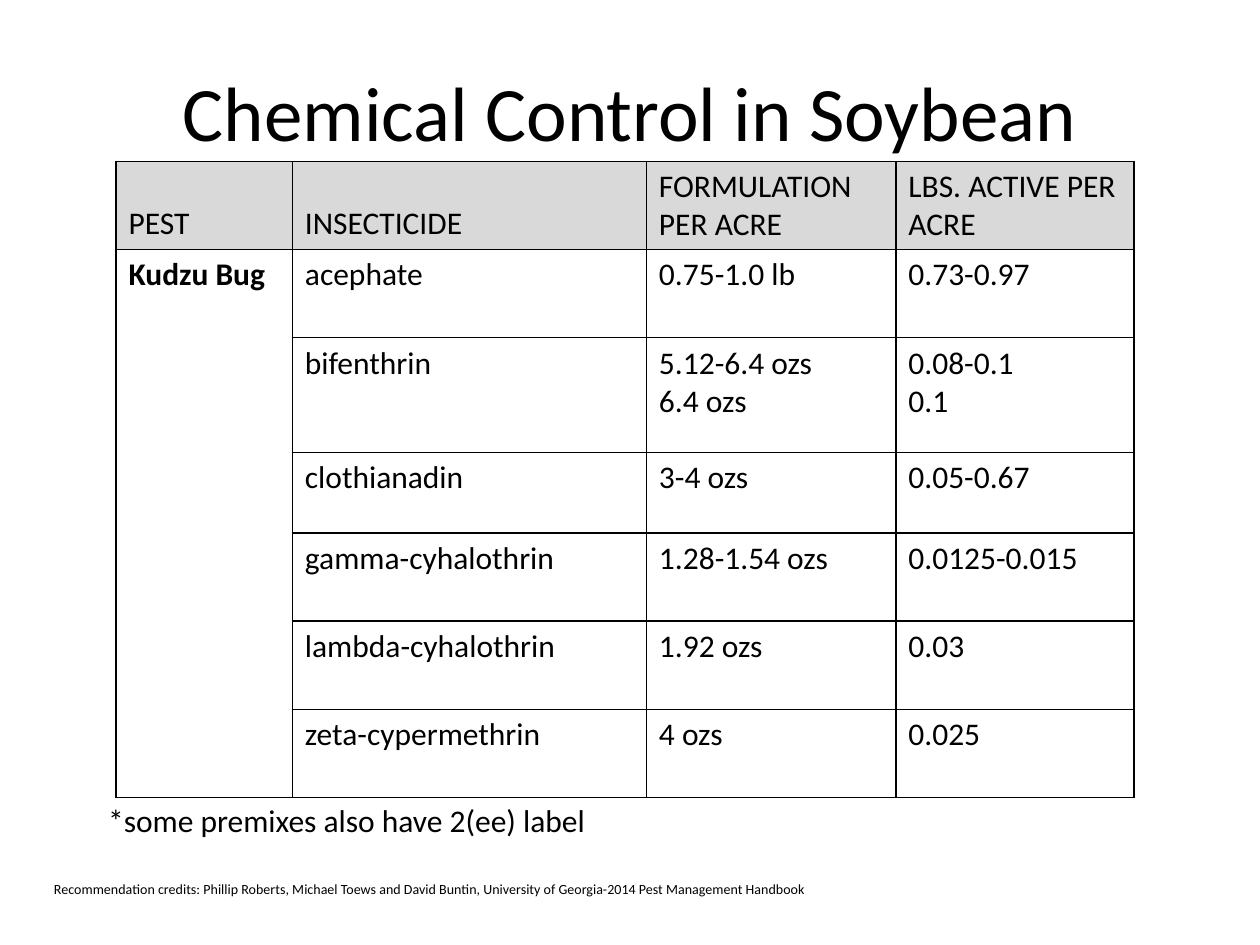
from dataclasses import dataclass

from lxml.etree import SubElement
from pptx import Presentation
from pptx.dml.color import RGBColor
from pptx.enum.text import MSO_ANCHOR as Anchor, PP_ALIGN as Align
from pptx.oxml.ns import qn
from pptx.util import Inches, Pt


@dataclass(frozen=True)
class Theme:
    font: str = "Calibri"
    ink: str = "000000"
    header: str = "D9D9D9"
    title: int = 44
    body: int = 18
    credit: int = 8
    border: int = 1


THEME = Theme()

HEADERS = ["PEST", "INSECTICIDE", "FORMULATION PER ACRE", "LBS. ACTIVE PER ACRE"]
PEST = "Kudzu Bug"
TREATMENTS = [
    (["acephate"], ["0.75-1.0 lb"], ["0.73-0.97"]),
    (["bifenthrin"], ["5.12-6.4 ozs", "6.4 ozs"], ["0.08-0.1", "0.1"]),
    (["clothianadin"], ["3-4 ozs"], ["0.05-0.67"]),
    (["gamma-cyhalothrin"], ["1.28-1.54 ozs"], ["0.0125-0.015"]),
    (["lambda-cyhalothrin"], ["1.92 ozs"], ["0.03"]),
    (["zeta-cypermethrin"], ["4 ozs"], ["0.025"]),
]
COL_WIDTHS = [1.4, 2.81, 1.98, 1.89]
ROW_HEIGHTS = [0.7, 0.7, 0.91, 0.64, 0.7, 0.7, 0.7]


def write_lines(tf, lines, size, bold=False, align=Align.LEFT):
    for i, line in enumerate(lines):
        p = tf.paragraphs[0] if i == 0 else tf.add_paragraph()
        p.alignment = align
        r = p.add_run()
        r.text = line
        r.font.name = THEME.font
        r.font.size = Pt(size)
        r.font.bold = bold
        r.font.color.rgb = RGBColor.from_string(THEME.ink)


def add_text(slide, box, text, size, align=Align.LEFT, anchor=Anchor.TOP, wrap=True):
    tf = slide.shapes.add_textbox(*map(Inches, box)).text_frame
    tf.word_wrap = wrap
    tf.vertical_anchor = anchor
    write_lines(tf, [text], size, align=align)


def set_borders(cell):
    tcPr = cell._tc.get_or_add_tcPr()
    for i, side in enumerate(("lnL", "lnR", "lnT", "lnB")):
        ln = tcPr.makeelement(qn(f"a:{side}"), {"w": str(Pt(THEME.border))})
        fill = SubElement(ln, qn("a:solidFill"))
        SubElement(fill, qn("a:srgbClr"), val=THEME.ink)
        tcPr.insert(i, ln)


def style_cell(cell, fill=None):
    if fill:
        cell.fill.solid()
        cell.fill.fore_color.rgb = RGBColor.from_string(fill)
    else:
        cell.fill.background()
    set_borders(cell)


def add_title(slide, box):
    add_text(slide, box, "Chemical Control in Soybean", THEME.title,
             Align.CENTER, Anchor.MIDDLE)


def add_treatment_table(slide, box):
    rows, cols = len(ROW_HEIGHTS), len(COL_WIDTHS)
    table = slide.shapes.add_table(rows, cols, *map(Inches, box)).table
    table.first_row = table.horz_banding = False
    for column, width in zip(table.columns, COL_WIDTHS):
        column.width = Inches(width)
    for row, height in zip(table.rows, ROW_HEIGHTS):
        row.height = Inches(height)

    for c, header in enumerate(HEADERS):
        cell = table.cell(0, c)
        cell.vertical_anchor = Anchor.BOTTOM
        write_lines(cell.text_frame, [header], THEME.body)
        style_cell(cell, THEME.header)

    for r, treatment in enumerate(TREATMENTS, start=1):
        style_cell(table.cell(r, 0))
        for c, lines in enumerate(treatment, start=1):
            cell = table.cell(r, c)
            write_lines(cell.text_frame, lines, THEME.body)
            style_cell(cell)

    pest_cell = table.cell(1, 0)
    pest_cell.merge(table.cell(rows - 1, 0))
    write_lines(pest_cell.text_frame, [PEST], THEME.body, bold=True)


def add_footnote(slide, box):
    add_text(slide, box, "*some premixes also have 2(ee) label", THEME.body, wrap=False)


def add_credit(slide, box):
    add_text(slide, box,
             "Recommendation credits: Phillip Roberts, Michael Toews and David Buntin, "
             "University of Georgia-2014 Pest Management Handbook", THEME.credit)


def main():
    prs = Presentation()
    prs.slide_width, prs.slide_height = Inches(10), Inches(7.5)
    slide = prs.slides.add_slide(prs.slide_layouts[6])
    add_title(slide, (1, 0.25, 8, 1.25))
    add_treatment_table(slide, (0.92, 1.28, sum(COL_WIDTHS), sum(ROW_HEIGHTS)))
    add_footnote(slide, (0.76, 6.31, 4.03, 0.4))
    add_credit(slide, (0.33, 6.94, 6.75, 0.37))
    prs.save("out.pptx")


if __name__ == "__main__":
    main()
